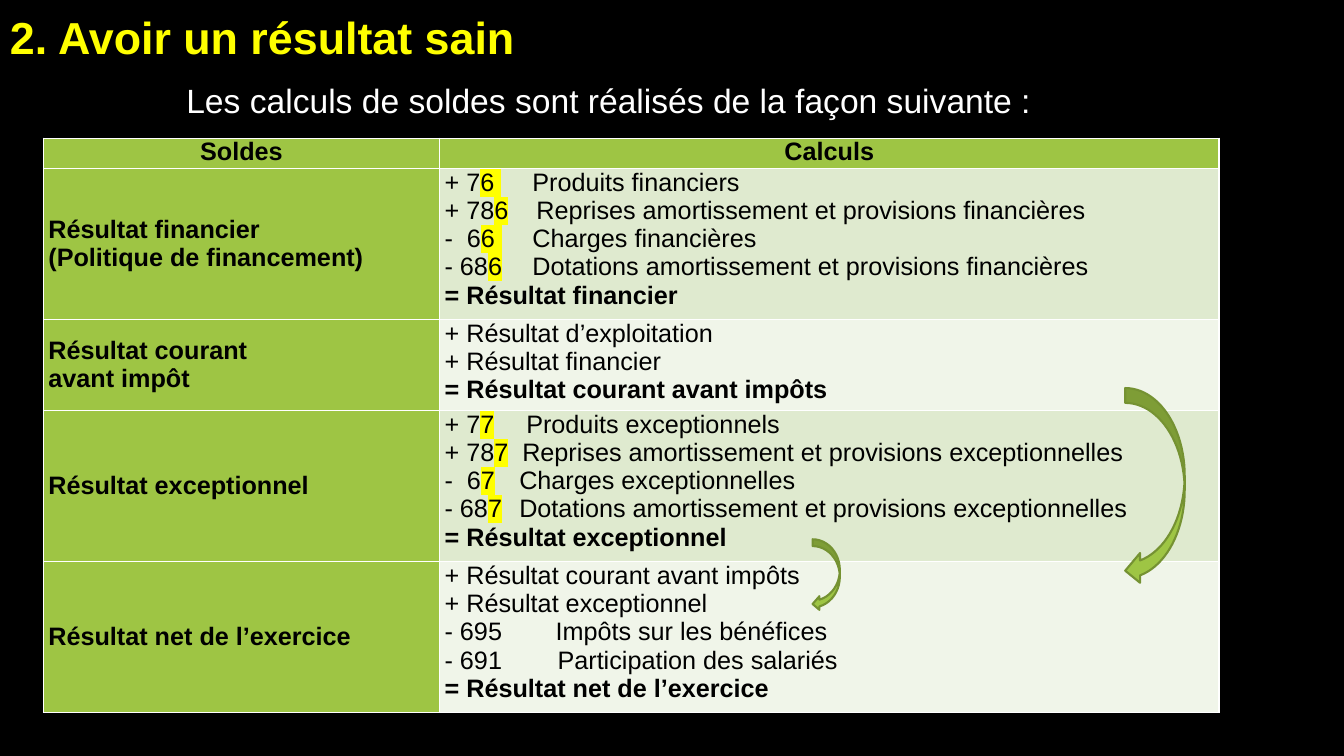
from lxml import etree
from pptx import Presentation
from pptx.dml.color import RGBColor
from pptx.enum import shapes, text
from pptx.oxml.ns import qn
from pptx.util import Inches, Pt

BLACK = RGBColor(0, 0, 0)
WHITE = RGBColor(255, 255, 255)
YELLOW = RGBColor(255, 255, 0)
GREEN = RGBColor(0x9E, 0xC5, 0x44)
OLIVE = RGBColor(0x75, 0x92, 0x32)
PALE = RGBColor(0xDF, 0xEA, 0xCF)
LIGHT = RGBColor(0xF0, 0xF5, 0xE9)


def style(run, size, color, bold=False):
    run.font.name = "Arial"
    run.font.size = Pt(size)
    run.font.bold = bold
    run.font.color.rgb = color


def set_tabs(para, stops):
    tabs = etree.SubElement(para._p.get_or_add_pPr(), qn("a:tabLst"))
    for stop in stops:
        etree.SubElement(tabs, qn("a:tab"), pos=str(Inches(stop)), algn="l")


prs = Presentation()
prs.slide_width, prs.slide_height = Inches(13.33), Inches(7.5)
slide = prs.slides.add_slide(prs.slide_layouts[6])
slide.background.fill.solid()
slide.background.fill.fore_color.rgb = BLACK

# Introduction line
intro = slide.shapes.add_textbox(Inches(1.75), Inches(0.74), Inches(8.66), Inches(0.5))
intro.text_frame.word_wrap = False
para = intro.text_frame.paragraphs[0]
para.text = "Les calculs de soldes sont réalisés de la façon suivante\u00a0:"
para.alignment = text.PP_ALIGN.JUSTIFY
para.space_before = para.space_after = Pt(6)
style(para.runs[0], 24, WHITE)

# Table content: a line is plain text, or (tab stop, account, marked digit, label)
rows = [
    (0.3, "Soldes", ["Calculs"]),
    (1.5, "Résultat financier\n(Politique de financement)", [
        (0.87, "+ 7", "6 ", "Produits financiers"),
        (0.91, "+ 78", "6", "Reprises amortissement et provisions financières"),
        (0.87, "-\t6", "6 ", "Charges financières"),
        (0.87, "- 68", "6", "Dotations amortissement et provisions financières"),
        "= Résultat financier"]),
    (0.9, "Résultat courant\navant impôt", [
        "+ Résultat d’exploitation",
        "+ Résultat financier",
        "= Résultat courant avant impôts"]),
    (1.5, "Résultat exceptionnel", [
        (0.81, "+ 7", "7", "Produits exceptionnels"),
        (0.77, "+ 78", "7", "Reprises amortissement et provisions exceptionnelles"),
        (0.74, "-\t6", "7", "Charges exceptionnelles"),
        (0.74, "- 68", "7", "Dotations amortissement et provisions exceptionnelles"),
        "= Résultat exceptionnel"]),
    (1.5, "Résultat net de l’exercice", [
        "+ Résultat courant avant impôts",
        "+ Résultat exceptionnel",
        (1.1, "- 695", "", "Impôts sur les bénéfices"),
        (1.12, "- 691", "", "Participation des salariés"),
        "= Résultat net de l’exercice"]),
]

# Table of balances
table = slide.shapes.add_table(len(rows), 2, Inches(0.43), Inches(1.37),
                               Inches(11.66), Inches(5.7)).table
table.columns[0].width, table.columns[1].width = Inches(3.93), Inches(7.73)
for i, (height, name, lines) in enumerate(rows):
    table.rows[i].height = Inches(height)
    for j, content in enumerate((name.split("\n"), lines)):
        cell = table.cell(i, j)
        cell.margin_left = cell.margin_right = Inches(0.05)
        cell.margin_top = cell.margin_bottom = 0
        head = i == 0 or j == 0
        cell.fill.solid()
        cell.fill.fore_color.rgb = GREEN if head else (LIGHT, PALE)[i % 2]
        if i and j == 0:
            cell.vertical_anchor = text.MSO_ANCHOR.MIDDLE
        for k, line in enumerate(content):
            frame = cell.text_frame
            para = frame.add_paragraph() if k else frame.paragraphs[0]
            if i == 0:
                para.alignment = text.PP_ALIGN.CENTER
            elif j:
                para.alignment = text.PP_ALIGN.JUSTIFY
            if isinstance(line, str):
                para.text = line
                style(para.runs[0], 18, BLACK, head or line.startswith("="))
                continue
            stop, code, digit, label = line
            set_tabs(para, (0.22, stop))
            for part in filter(None, (code, digit, "\t" + label)):
                run = para.add_run()
                run.text = part
                style(run, 18, BLACK)
                if part == digit:
                    mark = etree.Element(qn("a:highlight"))
                    etree.SubElement(mark, qn("a:srgbClr"), val=str(YELLOW))
                    run._r.rPr.find(qn("a:latin")).addprevious(mark)

# Curved arrows carrying results down
for box in ((11.16, 3.85, 0.59, 1.96), (8.06, 5.35, 0.27, 0.71)):
    arrow = slide.shapes.add_shape(shapes.MSO_SHAPE.CURVED_LEFT_ARROW, *map(Inches, box))
    arrow.shadow.inherit = False
    arrow.fill.solid()
    arrow.fill.fore_color.rgb = GREEN
    arrow.line.color.rgb = OLIVE
    arrow.line.width = Pt(1.5)

# Title
title = slide.shapes.add_textbox(0, Inches(0.05), Inches(10.75), Inches(0.64))
title.text_frame.word_wrap = True
para = title.text_frame.paragraphs[0]
para.text = "2. Avoir un résultat sain"
para.space_before, para.space_after = Pt(12), Pt(6)
style(para.runs[0], 32, YELLOW, True)

prs.save("out.pptx")
